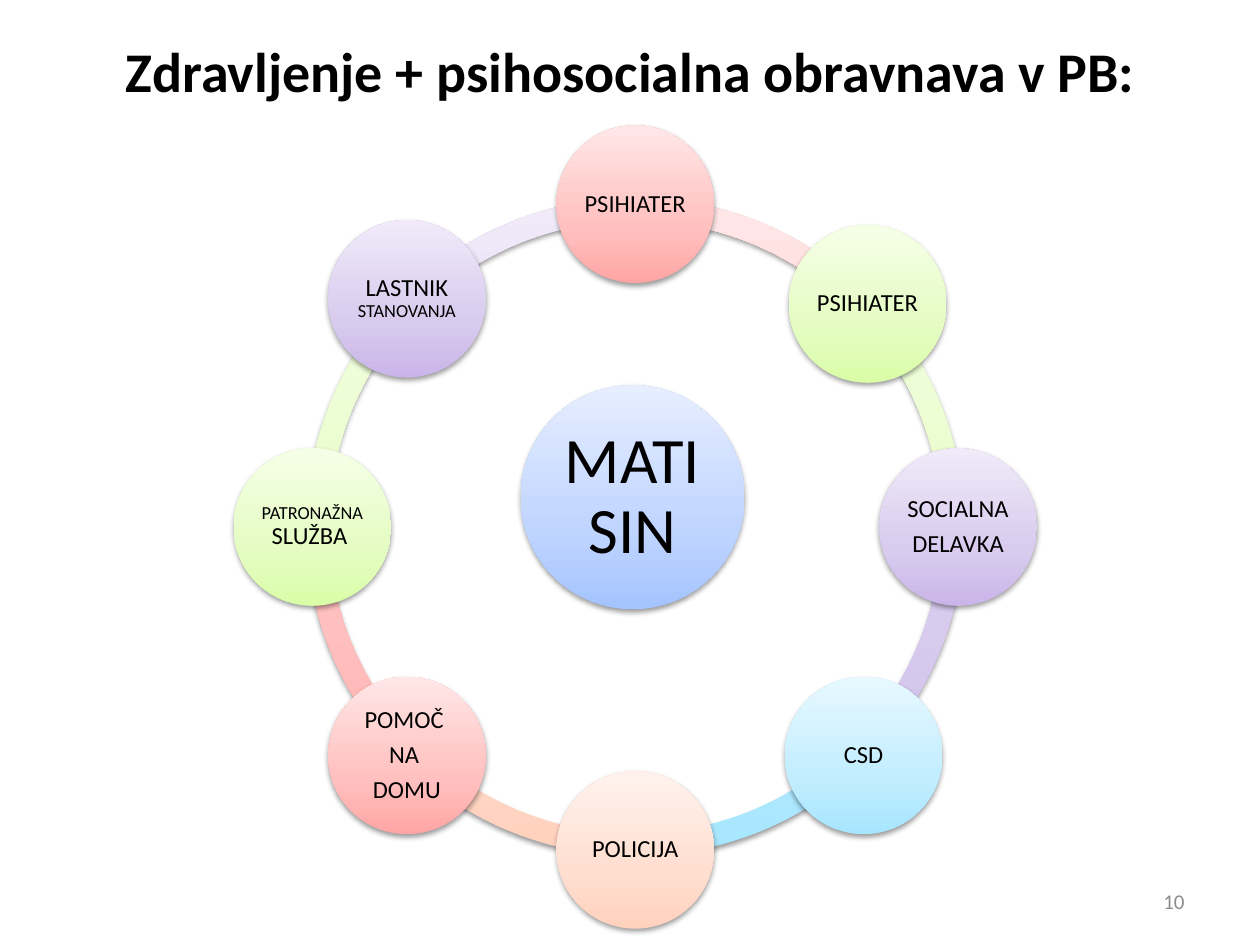
import math

from lxml import etree
from pptx import Presentation
from pptx.dml.color import RGBColor
from pptx.enum.shapes import MSO_SHAPE
from pptx.enum.text import MSO_ANCHOR, PP_ALIGN
from pptx.oxml import parse_xml
from pptx.oxml.ns import nsdecls, qn
from pptx.util import Pt

CIRCLE, ARC = MSO_SHAPE.OVAL, MSO_SHAPE.BLOCK_ARC
CENTER, RIGHT = PP_ALIGN.CENTER, PP_ALIGN.RIGHT
MIDDLE = MSO_ANCHOR.MIDDLE

FONT = "Calibri"
BLACK = RGBColor(0x00, 0x00, 0x00)
GRAY = RGBColor(0x8C, 0x8C, 0x8C)

# Gradient colours from the bottom of a shape to its top
STOPS = (0, 35, 100)
RED = [RGBColor.from_string(c) for c in ("FFA6A5", "FFC0BF", "FFE7E7")]
GREEN = [RGBColor.from_string(c) for c in ("DAFDA7", "E4FCC2", "F5FFE7")]
PURPLE = [RGBColor.from_string(c) for c in ("C9B5E8", "D8CBEE", "F0EAF9")]
CYAN = [RGBColor.from_string(c) for c in ("A7E6FF", "C1EDFF", "E7F8FF")]
ORANGE = [RGBColor.from_string(c) for c in ("FFD2BD", "FFDED0", "FFF2ED")]
BLUE = [RGBColor.from_string(c) for c in ("A4C4FF", "BFD4FF", "E6EEFF")]

NORMAL, SMALL, LARGE = 14, 10.5, 37
NODE_SIZE, CORE_SIZE = 90, 128
ARC_WIDTH = 0.034

# Clockwise from the top: colours, paragraphs of (text, size) runs, shift
NODES = [
    (RED, [[("PSIHIATER", NORMAL)]], (0, 0)),
    (GREEN, [[("PSIHIATER", NORMAL)]], (2.3, 3)),
    (PURPLE, [[("SOCIALNA", NORMAL)], [("DELAVKA", NORMAL)]], (0, 0)),
    (CYAN, [[("CSD", NORMAL)]], (0, 0)),
    (ORANGE, [[("POLICIJA", NORMAL)]], (0, 0)),
    (RED, [[("POMOČ ", NORMAL)], [("NA ", NORMAL)], [("DOMU", NORMAL)]], (0, 0)),
    (GREEN, [[("PATRONAŽNA ", SMALL), ("SLUŽBA ", NORMAL)]], (0, 0)),
    (PURPLE, [[("LASTNIK ", NORMAL), ("STANOVANJA", SMALL)]], (0, 0)),
]


def format_font(font, size, color, bold=False):
    font.name, font.size, font.bold = FONT, Pt(size), bold
    font.color.rgb = color


def add_soft_shape(slide, preset, cx, cy, size, colors):
    """Add a square-framed shape with a vertical gradient and a soft shadow."""
    shape = slide.shapes.add_shape(
        preset, Pt(cx - size / 2), Pt(cy - size / 2), Pt(size), Pt(size))
    shape.line.fill.background()
    shape.fill.gradient()
    shape.fill.gradient_angle = 90
    properties = shape.element.spPr
    stop_list = properties.find(qn("a:gradFill")).find(qn("a:gsLst"))
    for stop in list(stop_list):
        stop_list.remove(stop)
    for position, color in zip(STOPS, colors):
        stop = etree.SubElement(stop_list, qn("a:gs"), pos=str(position * 1000))
        etree.SubElement(stop, qn("a:srgbClr"), val=str(color))
    properties.append(parse_xml(
        f'<a:effectLst {nsdecls("a")}>'
        f'<a:outerShdw blurRad="{Pt(3.1)}" dist="{Pt(1.6)}" dir="5400000" rotWithShape="0">'
        '<a:srgbClr val="000000"><a:alpha val="38000"/></a:srgbClr>'
        '</a:outerShdw></a:effectLst>'))
    return shape


def add_circle(slide, cx, cy, size, colors, paragraphs, inset):
    frame = add_soft_shape(slide, CIRCLE, cx, cy, size, colors).text_frame
    frame.word_wrap = True
    frame.vertical_anchor = MIDDLE
    frame.margin_left = frame.margin_right = Pt(inset)
    frame.margin_top = frame.margin_bottom = Pt(inset)
    for index, runs in enumerate(paragraphs):
        paragraph = frame.add_paragraph() if index else frame.paragraphs[0]
        paragraph.alignment = CENTER
        paragraph.line_spacing = 0.9
        paragraph.space_after = Pt(round(0.35 * max(s for _, s in runs), 1))
        for text, size_pt in runs:
            run = paragraph.add_run()
            run.text = text
            format_font(run.font, size_pt, BLACK)


def add_cycle(slide, left, top, size):
    """Draw the ring of arcs, the core and one circle per node."""
    cx, cy = left + size / 2, top + size / 2
    step = 360 / len(NODES)
    orbit = size / 2 * (1 - ARC_WIDTH / 2) - 0.3

    for index, (colors, _, _) in reversed(list(enumerate(NODES))):
        start = (270 + index * step) % 360
        arc = add_soft_shape(slide, ARC, cx, cy, size, colors)
        # Angles are stored in 60000ths of a degree, adjustments in 100000ths
        arc.adjustments[0] = start * 0.6
        arc.adjustments[1] = (start + step) % 360 * 0.6
        arc.adjustments[2] = ARC_WIDTH

    add_circle(slide, cx - 1.5, cy - 17, CORE_SIZE, BLUE,
               [[("MATI SIN", LARGE)]], 3.6)
    for index, (colors, paragraphs, (dx, dy)) in enumerate(NODES):
        angle = math.radians(270 + index * step)
        add_circle(slide, cx + orbit * math.cos(angle) + dx,
                   cy + orbit * math.sin(angle) + dy,
                   NODE_SIZE, colors, paragraphs, 1.4)


def set_title(slide, left, top, width, height):
    title = slide.shapes.title
    title.left, title.top = Pt(left), Pt(top)
    title.width, title.height = Pt(width), Pt(height)
    frame = title.text_frame
    frame.text = "Zdravljenje + psihosocialna obravnava v PB:"
    frame.vertical_anchor = MIDDLE
    frame.paragraphs[0].alignment = CENTER
    format_font(frame.paragraphs[0].runs[0].font, 32, BLACK, bold=True)


def add_page_number(slide, left, top, width, height):
    frame = slide.shapes.add_textbox(
        Pt(left), Pt(top), Pt(width), Pt(height)).text_frame
    frame.word_wrap = True
    frame.text = "10"
    frame.vertical_anchor = MIDDLE
    frame.paragraphs[0].alignment = RIGHT
    format_font(frame.paragraphs[0].runs[0].font, 12, GRAY)


def main():
    presentation = Presentation()
    presentation.slide_width, presentation.slide_height = Pt(720), Pt(540)
    slide = presentation.slides.add_slide(presentation.slide_layouts[5])
    set_title(slide, 36.5, 9.5, 648, 61)
    add_cycle(slide, 175, 113.2, 376)
    add_page_number(slide, 516, 500.5, 168, 28.8)
    presentation.save("out.pptx")


if __name__ == "__main__":
    main()
